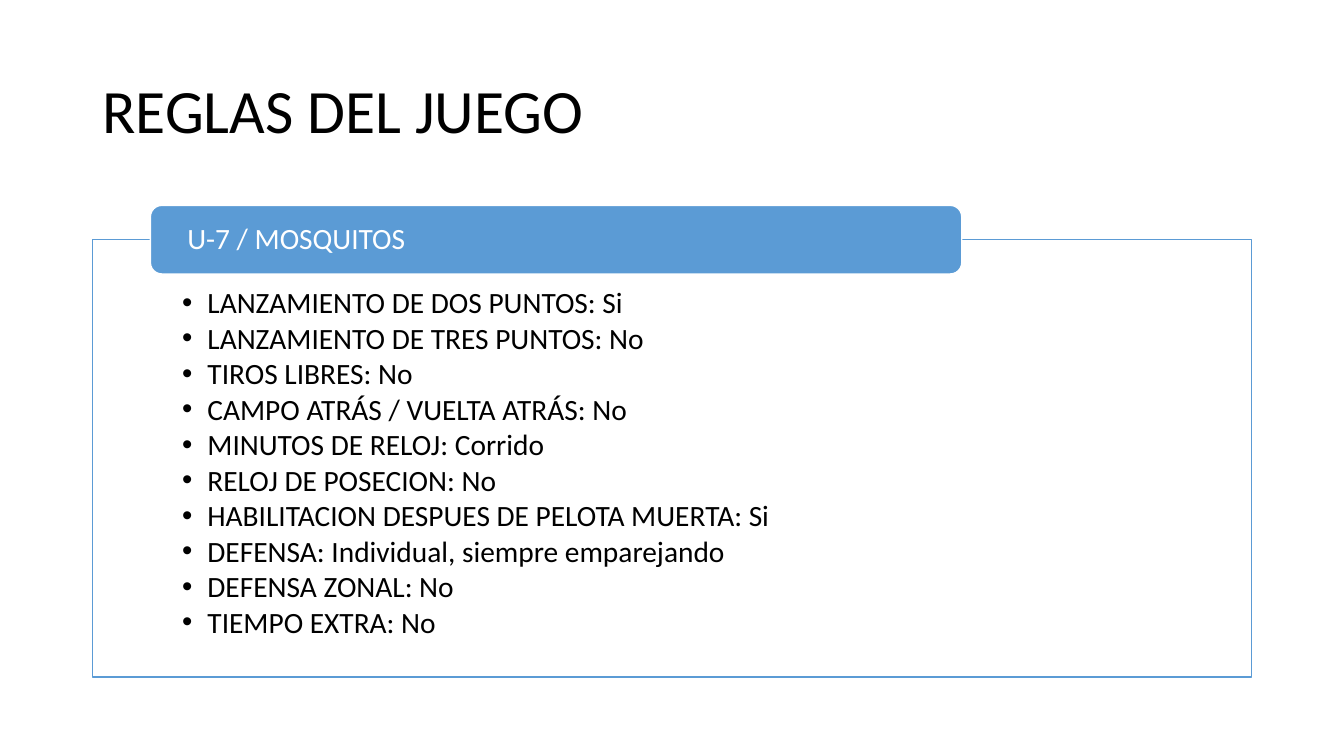
from dataclasses import dataclass

from lxml.etree import SubElement
from pptx import Presentation
from pptx.dml.color import RGBColor
from pptx.enum.shapes import MSO_SHAPE as Shape
from pptx.enum.text import MSO_ANCHOR as Anchor, PP_ALIGN as Align
from pptx.oxml.ns import qn
from pptx.util import Pt


@dataclass(frozen=True)
class Theme:
    font: str = "Calibri"
    ink: RGBColor = RGBColor(0, 0, 0)
    paper: RGBColor = RGBColor(255, 255, 255)
    accent: RGBColor = RGBColor(0x5B, 0x9B, 0xD5)
    title_size: float = 44
    body_size: float = 21
    line_spacing: float = 0.9
    rule_gap: float = 2.7
    outline: float = 1


THEME = Theme()
CATEGORY = "U-7 / MOSQUITOS"
RULES = [
    "LANZAMIENTO DE DOS PUNTOS: Si",
    "LANZAMIENTO DE TRES PUNTOS: No",
    "TIROS LIBRES: No",
    "CAMPO ATRÁS / VUELTA ATRÁS: No",
    "MINUTOS DE RELOJ: Corrido",
    "RELOJ DE POSECION: No",
    "HABILITACION DESPUES DE PELOTA MUERTA: Si",
    "DEFENSA: Individual, siempre emparejando",
    "DEFENSA ZONAL: No",
    "TIEMPO EXTRA: No",
]


def write(frame, text, size, color, anchor, insets):
    """Fill a text frame; insets are left, top, right, bottom in points."""
    frame.text = text
    frame.word_wrap = True
    frame.vertical_anchor = anchor
    (frame.margin_left, frame.margin_top,
     frame.margin_right, frame.margin_bottom) = map(Pt, insets)
    for paragraph in frame.paragraphs:
        paragraph.alignment = Align.LEFT
        paragraph.line_spacing = THEME.line_spacing
        for run in paragraph.runs:
            run.font.name = THEME.font
            run.font.size = Pt(size)
            run.font.color.rgb = color


def add_bullet(paragraph, indent):
    paragraph.level = 1
    properties = paragraph._p.get_or_add_pPr()
    properties.set("marL", str(Pt(indent)))
    properties.set("indent", str(-Pt(indent)))
    SubElement(properties, qn("a:buFont"), typeface="Arial")
    SubElement(properties, qn("a:buChar"), char="•")


def add_block(slide, kind, box, fill, line):
    block = slide.shapes.add_shape(kind, *map(Pt, box))
    block.shadow.inherit = False
    block.fill.solid()
    block.fill.fore_color.rgb = fill
    block.line.color.rgb = line
    block.line.width = Pt(THEME.outline)
    return block


def add_title(slide, box, text):
    title = slide.shapes.add_textbox(*map(Pt, box))
    write(title.text_frame, text, THEME.title_size, THEME.ink,
          Anchor.MIDDLE, (7.2, 3.6, 7.2, 3.6))


def add_rules_panel(slide, box, category, rules):
    left, top, width, height = box
    tab_height = 49

    # Framed list of rules
    panel = add_block(slide, Shape.RECTANGLE, box, THEME.paper, THEME.accent)
    write(panel.text_frame, "\n".join(rules), THEME.body_size, THEME.ink,
          Anchor.TOP, (64.2, 34.6, 64.2, 11.5))
    for rule in panel.text_frame.paragraphs:
        rule.space_after = Pt(THEME.rule_gap)
        add_bullet(rule, 18)

    # Category tab centred on the top edge of the frame
    tab_box = (left + 0.05 * width, top - tab_height / 2,
               0.7 * width, tab_height)
    tab = add_block(slide, Shape.ROUNDED_RECTANGLE, tab_box,
                    THEME.accent, THEME.paper)
    write(tab.text_frame, category, THEME.body_size, THEME.paper,
          Anchor.MIDDLE, (24, 0, 24, 0))


def main():
    deck = Presentation()
    deck.slide_width, deck.slide_height = Pt(960), Pt(540)
    slide = deck.slides.add_slide(deck.slide_layouts[6])
    margin, content_width = 66, 828
    add_title(slide, (margin, 28.75, content_width, 104.4), "REGLAS DEL JUEGO")
    add_rules_panel(slide, (margin, 171.2, content_width, 312.5),
                    CATEGORY, RULES)
    deck.save("out.pptx")


if __name__ == "__main__":
    main()
